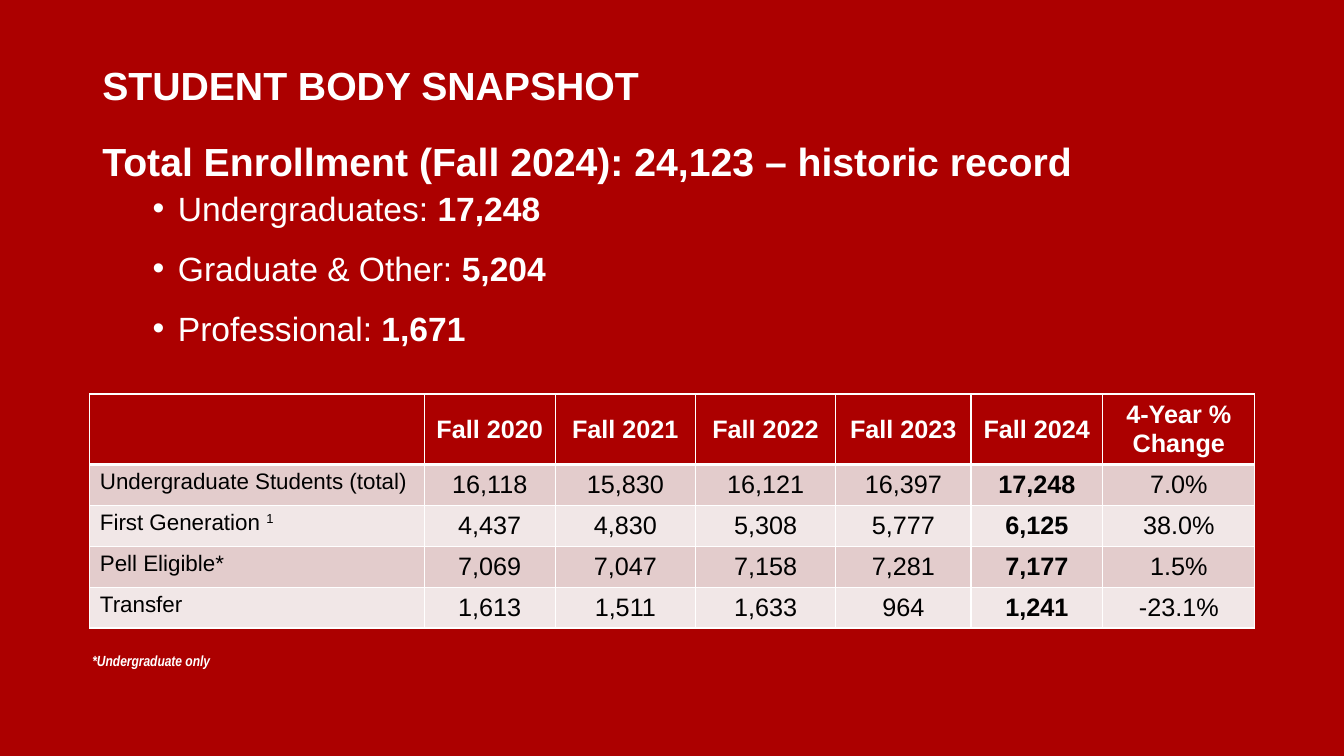
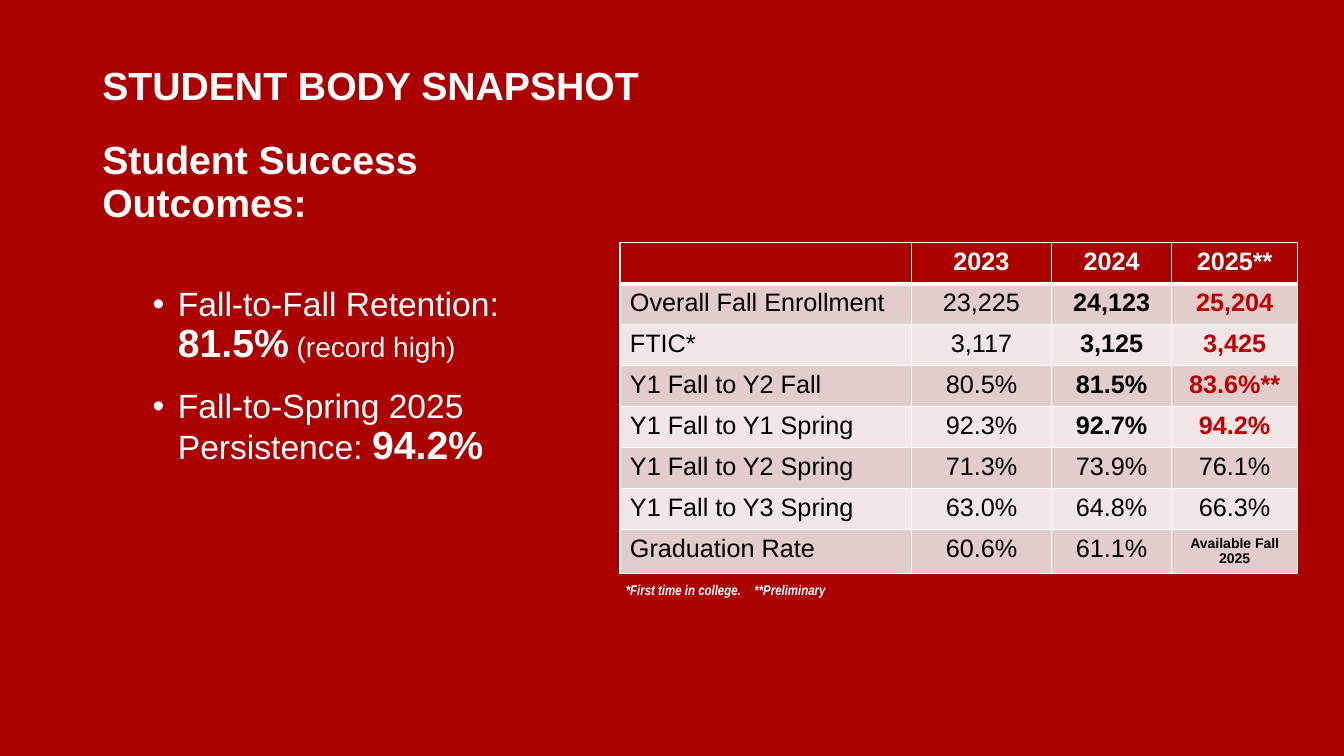
from itertools import product

from lxml import etree
from pptx import Presentation
from pptx.dml.color import RGBColor as Rgb
from pptx.enum.text import MSO_ANCHOR as Anchor, PP_ALIGN as Align
from pptx.oxml.ns import qn
from pptx.util import Inches, Pt

COLORS = {
    "red": "AC0000", "accent": "C00000", "white": "FFFFFF", "black": "000000",
    "dark band": "E3CCCC", "light band": "F1E7E7",
}
COLUMNS, ROWS = 160, 90  # grid of the slide
UNIT = Inches(1) / 12  # side of one grid square

HEADING = {"size": 28, "bold": True}
PLAIN = {"size": 24}
STRONG = {"size": 24, "bold": True}
NOTE = {"bold": True, "italic": True, "name": "Arial Narrow"}


def grid(count):
    return round(count * UNIT)


class SlideBuilder:
    """Holds the shared style and the slide being built."""

    base = {"name": "Arial", "size": 18, "bold": False, "color": "white"}

    def __init__(self):
        self.deck = Presentation()
        self.deck.slide_width, self.deck.slide_height = grid(COLUMNS), grid(ROWS)
        self.page = None

    def new_page(self, title):
        self.page = self.deck.slides.add_slide(self.deck.slide_layouts[6])
        fill = self.page.background.fill
        fill.solid()
        fill.fore_color.rgb = Rgb.from_string(COLORS["red"])
        frame = self.text_box(11, 6.6, 99.5, 7.8, Anchor.MIDDLE)
        self.add_spans(frame.paragraphs[0], [(title, HEADING)], line_spacing=0.9)

    def text_box(self, left, top, width, height, anchor=Anchor.TOP):
        box = self.page.shapes.add_textbox(*map(grid, (left, top, width, height)))
        frame = box.text_frame
        frame.word_wrap = True
        frame.vertical_anchor = anchor
        return frame

    def add_spans(self, para, spans, **layout):
        """Fill a paragraph with (text, format) spans; a newline is a line break."""
        for key, value in layout.items():
            setattr(para, key, value)
        for text, style in spans:
            if text == "\n":
                para.add_line_break()
                continue
            span = para.add_run()
            span.text = text
            for key, value in {**self.base, **style}.items():
                if key == "color":
                    span.font.color.rgb = Rgb.from_string(COLORS[value])
                elif key == "size":
                    span.font.size = Pt(value)
                elif key == "baseline":
                    span.font._element.set("baseline", str(value * 1000))
                else:
                    setattr(span.font, key, value)

    def bullet_list(self, area, heading, items, first_gap=5):
        frame = self.text_box(*area)
        self.add_spans(frame.paragraphs[0], [(heading, HEADING)], line_spacing=0.9)
        for number, spans in enumerate(items):
            para = frame.add_paragraph()
            props = para._p.get_or_add_pPr()
            props.set("marL", str(Inches(0.75)))
            props.set("indent", str(Inches(-0.25)))
            font = etree.SubElement(props, qn("a:buFont"))
            font.set("typeface", "Arial")
            etree.SubElement(props, qn("a:buChar")).set("char", "•")
            self.add_spans(para, spans, line_spacing=0.9, space_after=Pt(12),
                           space_before=Pt(5 if number else first_gap))

    def footnote(self, area, text, size, tab=None):
        frame = self.text_box(*area)
        frame.margin_left = 0
        para = frame.paragraphs[0]
        if tab:
            tabs = etree.SubElement(para._p.get_or_add_pPr(), qn("a:tabLst"))
            stop = etree.SubElement(tabs, qn("a:tab"))
            stop.set("pos", str(grid(tab)))
            stop.set("algn", "l")
        self.add_spans(para, [(text, {**NOTE, "size": size})])

    def border(self, cell, is_header, below_header):
        props = cell._tc.get_or_add_tcPr()
        for side in "LRTB":
            thick = is_header and side == "B" or below_header and side == "T"
            line = etree.SubElement(props, qn(f"a:ln{side}"))
            line.set("w", str(Pt(3 if thick else 1)))
            paint = etree.SubElement(line, qn("a:solidFill"))
            etree.SubElement(paint, qn("a:srgbClr")).set("val", COLORS["white"])

    def table(self, left, top, widths, heights, rows, accents, label=None, anchor=Anchor.TOP):
        """Draw a banded table; accents maps (row, column) to a text format."""
        area = map(grid, (left, top, sum(widths), sum(heights)))
        table = self.page.shapes.add_table(len(rows), len(widths), *area).table
        for column, width in zip(table.columns, widths):
            column.width = grid(width)
        for row, height in zip(table.rows, heights):
            row.height = grid(height)
        for row, column in product(range(len(rows)), range(len(widths))):
            cell, content = table.cell(row, column), rows[row][column]
            self.border(cell, row == 0, row == 1)
            band = "dark band" if row % 2 else "light band"
            cell.fill.solid()
            cell.fill.fore_color.rgb = Rgb.from_string(COLORS[band if row else "red"])
            style = {"color": "black"} if row else {"bold": True}
            if column == 0:
                style.update(label or {})
            style.update(accents.get((row, column), {}))
            place = style.pop("anchor", anchor if column else Anchor.TOP)
            cell.vertical_anchor = place
            spans = [(content, {})] if isinstance(content, str) else content
            self.add_spans(cell.text_frame.paragraphs[0],
                           [(text, {**style, **extra}) for text, extra in spans if text],
                           alignment=Align.CENTER if column else Align.LEFT)


def enrollment(builder):
    builder.new_page("STUDENT BODY SNAPSHOT")
    groups = [("Undergraduates: ", "17,248"), ("Graduate & Other: ", "5,204"),
              ("Professional: ", "1,671")]
    builder.bullet_list(
        (11, 16.4, 132.8, 20.3), "Total Enrollment (Fall 2024): 24,123 – historic record",
        [[(name, PLAIN), (count, STRONG)] for name, count in groups])
    # Enrollment by year
    rows = [
        ["", *(f"Fall {year}" for year in range(2020, 2025)), "4-Year % Change"],
        ["Undergraduate Students (total)", "16,118", "15,830", "16,121", "16,397", "17,248", "7.0%"],
        [[("First Generation ", {}), ("1", {"baseline": 30})],
         "4,437", "4,830", "5,308", "5,777", "6,125", "38.0%"],
        ["Pell Eligible*", "7,069", "7,047", "7,158", "7,281", "7,177", "1.5%"],
        ["Transfer", "1,613", "1,511", "1,633", "964", "1,241", "-23.1%"],
    ]
    builder.table(10.7, 46.9, [39.8, 15.6, 16.7, 16.7, 16.1, 15.7, 18.1], [8] + [4.87] * 4,
                  rows, {(row, 5): {"bold": True} for row in range(1, 5)},
                  label={"size": 16}, anchor=Anchor.MIDDLE)
    builder.footnote((11, 77, 18, 3.4), "*Undergraduate only", 10.5)


def outcomes(builder):
    builder.new_page("STUDENT BODY SNAPSHOT")
    builder.bullet_list(
        (11, 16.2, 60, 65.6), "Student Success Outcomes:",
        [[("Fall-to-Fall Retention:", PLAIN), ("\n", PLAIN), ("81.5%", HEADING),
          (" (record high)", {"size": 20})],
         [("Fall-to-Spring 2025 Persistence: ", PLAIN), ("94.2%", HEADING)]],
        first_gap=44)
    # Outcomes by year
    rows = [
        ["", "2023", "2024", "2025**"],
        ["Overall Fall Enrollment", "23,225", "24,123", "25,204"],
        ["FTIC*", "3,117", "3,125", "3,425"],
        ["Y1 Fall to Y2 Fall", "80.5%", "81.5%", "83.6%**"],
        ["Y1 Fall to Y1 Spring", "92.3%", "92.7%", "94.2%"],
        ["Y1 Fall to Y2 Spring", "71.3%", "73.9%", "76.1%"],
        ["Y1 Fall to Y3 Spring", "63.0%", "64.8%", "66.3%"],
        ["Graduation Rate", "60.6%", "61.1%", "Available Fall 2025"],
    ]
    accents = {(7, 3): {"size": 10, "bold": True, "anchor": Anchor.MIDDLE}}
    for row in range(1, 5):
        accents[row, 2] = {"bold": True}
        accents[row, 3] = {"bold": True, "color": "accent"}
    builder.table(73.8, 28.9, [34.7, 16.7, 14.3, 15], [4.88] * 8, rows, accents)
    builder.footnote((74.5, 68.6, 31.3, 3.2), "*First time in college.\t**Preliminary", 10, tab=15.3)


def main():
    builder = SlideBuilder()
    enrollment(builder)
    outcomes(builder)
    builder.deck.save("out.pptx")


if __name__ == "__main__":
    main()
